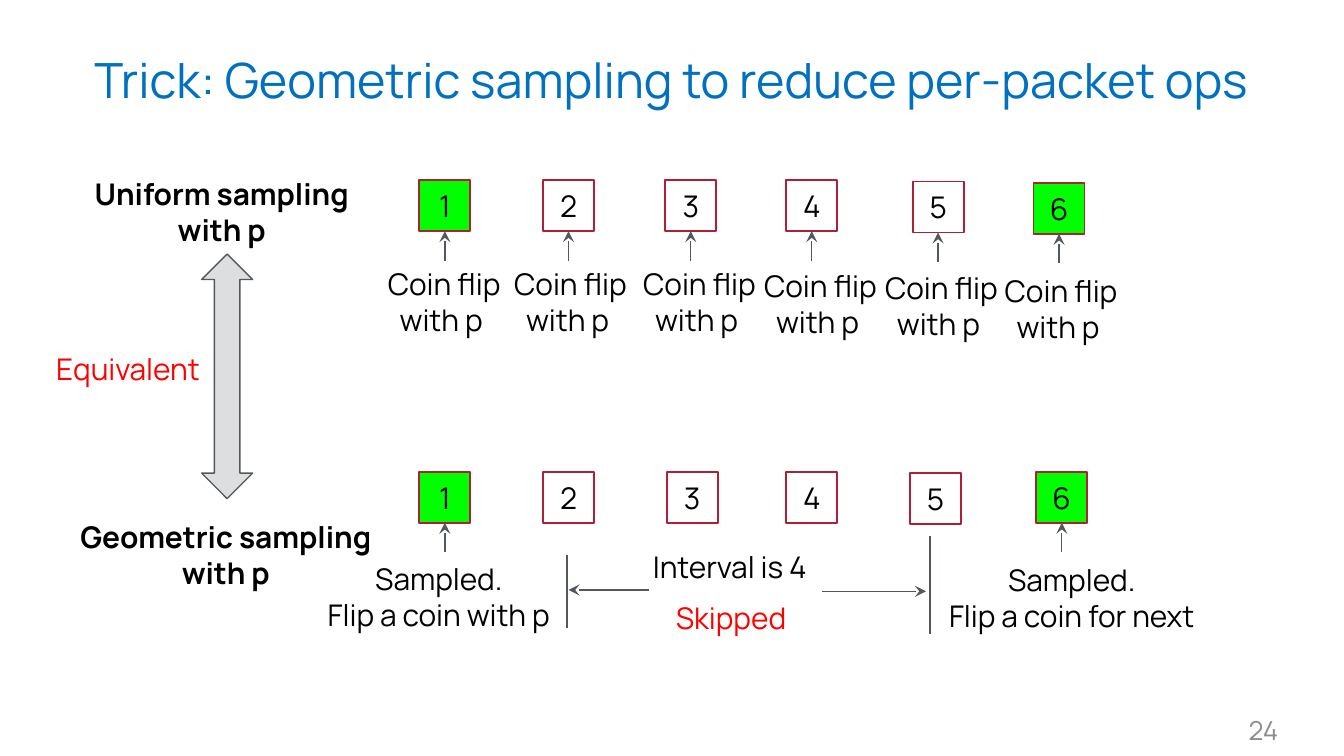
import lxml.etree
import pptx
import pptx.dml.color
import pptx.enum.shapes
import pptx.enum.text
import pptx.oxml.ns
import pptx.util

Inches = pptx.util.Inches
ALIGN = pptx.enum.text.PP_ALIGN
ANCHOR = pptx.enum.text.MSO_ANCHOR
SHAPE = pptx.enum.shapes.MSO_SHAPE

COLORS = {
    "title": "0070C0", "text": "000000", "accent": "FF0000", "page": "8C8C8C",
    "sampled": "00FF00", "plain": "FFFFFF", "border": "AE2035",
    "line": "53585F", "double_arrow": "DCDEE0",
}
FONT = "Manrope"
SLIDE_WIDTH = 10
SLIDE_HEIGHT = SLIDE_WIDTH * 9 / 16
PACKET_SIZE = 0.38
ARROW_LENGTH = 0.22
SAMPLED_PACKETS = (1, 6)
COIN_FLIP = ["Coin flip", "with p "]

PACKET_ROWS = [
    {"corners": [(3.12, 1.34), (4.04, 1.34), (4.95, 1.34), (5.85, 1.34), (6.79, 1.35), (7.69, 1.36)],
     "arrows": (1, 2, 3, 4, 5, 6)},
    {"corners": [(3.12, 3.51), (4.04, 3.51), (4.96, 3.51), (5.85, 3.51), (6.77, 3.52), (7.71, 3.51)],
     "arrows": SAMPLED_PACKETS},
]
COIN_FLIP_CORNERS = [(2.75, 1.88), (3.69, 1.88), (4.65, 1.88), (5.55, 1.89), (6.45, 1.91), (7.34, 1.93)]

BOLD = {"bold": True}
LEFT_RED = {"color": "accent", "alignment": ALIGN.LEFT}
LABELS = [
    ((0.36, 1.21, 2.58, 0.3), ["Uniform sampling with p"], BOLD),
    ((0.32, 3.76, 2.72, 0.3), ["Geometric sampling with p"], BOLD),
    ((0.32, 2.57, 1.33, 0.14), ["Equivalent"], LEFT_RED),
    ((2.29, 4.07, 1.95, 0.3), ["Sampled.", "Flip a coin with p"], {}),
    ((4.76, 3.98, 1.43, 0.3), ["Interval is 4"], {"alignment": ALIGN.LEFT}),
    ((4.93, 4.36, 1.05, 0.3), ["Skipped"], LEFT_RED),
    ((6.89, 4.08, 2.17, 0.3), ["Sampled.", "Flip a coin for next"], {}),
    ((9.14, 5.24, 0.47, 0.39), ["24"],
     {"size": 14, "color": "page", "alignment": ALIGN.RIGHT, "anchor": ANCHOR.MIDDLE,
      "margins": (0.1, 0.05)}),
    ((0, 0.12, SLIDE_WIDTH, 0.94), ["Trick: Geometric sampling to reduce per-packet ops"],
     {"size": 26, "color": "title", "anchor": ANCHOR.MIDDLE, "margins": (0.06, 0.06)}),
]
INTERVAL_LINES = [
    ((4.22, 4.13), (4.22, 4.67), False),
    ((6.92, 3.99), (6.92, 4.72), False),
    ((4.83, 4.39), (4.23, 4.39), True),
    ((6.12, 4.4), (6.89, 4.4), True),
]


def rgb(name):
    return pptx.dml.color.RGBColor.from_string(COLORS[name])


def write(shape, lines, size=16, color="text", bold=False, alignment=ALIGN.CENTER,
          anchor=ANCHOR.TOP, margins=(0.1, 0.1)):
    frame = shape.text_frame
    across, down = (Inches(margin) for margin in margins)
    frame_format = {"word_wrap": True, "vertical_anchor": anchor, "margin_left": across,
                    "margin_right": across, "margin_top": down, "margin_bottom": down}
    for name, value in frame_format.items():
        setattr(frame, name, value)
    frame.text = "\n".join(lines)
    for paragraph in frame.paragraphs:
        paragraph.alignment = alignment
        font_format = {"name": FONT, "size": pptx.util.Pt(size), "bold": bold}
        for name, value in font_format.items():
            setattr(paragraph.font, name, value)
        paragraph.font.color.rgb = rgb(color)


def add_label(slide, place, lines, text_format):
    write(slide.shapes.add_textbox(*map(Inches, place)), lines, **text_format)


def add_filled_shape(slide, kind, place, fill, line, width):
    shape = slide.shapes.add_shape(kind, *map(Inches, place))
    shape.shadow.inherit = False
    shape.fill.solid()
    shape.fill.fore_color.rgb = rgb(fill)
    shape.line.color.rgb = rgb(line)
    shape.line.width = pptx.util.Pt(width)
    return shape


def add_line(slide, start, end, arrow):
    connector = slide.shapes.add_connector(
        pptx.enum.shapes.MSO_CONNECTOR.STRAIGHT, *map(Inches, start + end))
    connector.line.color.rgb = rgb("line")
    connector.line.width = pptx.util.Pt(0.75)
    qualified = pptx.oxml.ns.qn
    properties = connector.element.spPr
    if arrow:
        line = properties.find(qualified("a:ln"))
        lxml.etree.SubElement(line, qualified("a:tailEnd"), type="stealth")
    lxml.etree.SubElement(properties, qualified("a:effectLst"))
    return connector


def add_packet_row(slide, row):
    for number, (left, top) in enumerate(row["corners"], 1):
        fill = "sampled" if number in SAMPLED_PACKETS else "plain"
        place = (left, top, PACKET_SIZE, PACKET_SIZE)
        packet = add_filled_shape(slide, SHAPE.RECTANGLE, place, fill, "border", 1)
        write(packet, [str(number)], anchor=ANCHOR.MIDDLE, margins=(0.1, 0.05))
        if number in row["arrows"]:
            center, bottom = left + PACKET_SIZE / 2, top + PACKET_SIZE
            arrow = add_line(slide, (center, bottom + ARROW_LENGTH), (center, bottom), True)
            arrow.end_connect(packet, 2)


def main():
    presentation = pptx.Presentation()
    presentation.slide_width = Inches(SLIDE_WIDTH)
    presentation.slide_height = Inches(SLIDE_HEIGHT)
    slide = presentation.slides.add_slide(presentation.slide_layouts[6])

    for row in PACKET_ROWS:
        add_packet_row(slide, row)
    double_arrow = add_filled_shape(
        slide, SHAPE.UP_DOWN_ARROW, (1.5, 1.89, 0.38, 1.82), "double_arrow", "line", 0.75)
    double_arrow.adjustments[0] = 0.5
    double_arrow.adjustments[1] = 0.5
    for start, end, arrow in INTERVAL_LINES:
        add_line(slide, start, end, arrow)
    for corner in COIN_FLIP_CORNERS:
        add_label(slide, corner + (1.11, 0.33), COIN_FLIP, {})
    for place, lines, text_format in LABELS:
        add_label(slide, place, lines, text_format)

    presentation.save("out.pptx")


if __name__ == "__main__":
    main()
